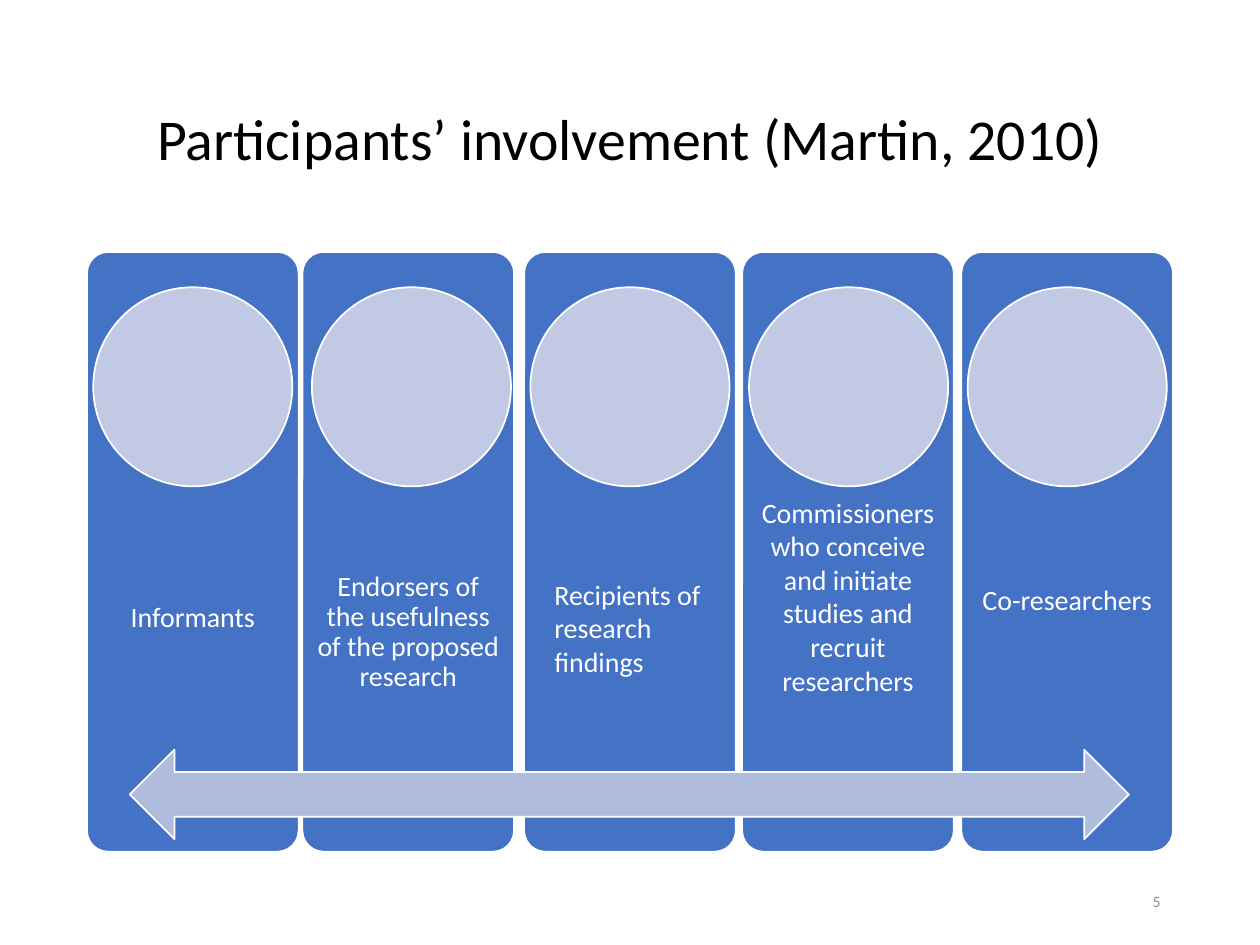
from pptx import Presentation
from pptx.dml.color import RGBColor
from pptx.enum.shapes import MSO_SHAPE as Shape
from pptx.enum.text import MSO_ANCHOR as Anchor, PP_ALIGN as Align
from pptx.util import Inches, Pt

COLUMN_WIDTH = 1.68
COLUMN_HEIGHT = 4.76
COLUMN_TOP = 2
CIRCLE_SIZE = 1.58

# left, label, alignment, line spacing, vertical shift of the label, left inset
COLUMNS = [
    (0.69, "Informants", Align.CENTER, 0.9, 0.06, 0.12),
    (2.4, "Endorsers of the usefulness of the proposed research",
     Align.CENTER, 0.9, 0.17, 0.12),
    (4.16, "Recipients of research findings", Align.LEFT, 1, 0.13, 0.24),
    (5.89, "Commissioners who conceive and initiate studies and recruit researchers",
     Align.CENTER, 1, -0.12, 0.12),
    (7.63, "Co-researchers", Align.CENTER, 1, -0.09, 0.12),
]


def color(hex_string):
    return RGBColor.from_string(hex_string)


def add_filled(page, kind, left, top, width, height, fill):
    """Add a preset shape with a thin white outline and no shadow."""
    shape = page.shapes.add_shape(
        kind, Inches(left), Inches(top), Inches(width), Inches(height))
    shape.shadow.inherit = False
    shape.fill.solid()
    shape.fill.fore_color.rgb = color(fill)
    shape.line.color.rgb = color("FFFFFF")
    shape.line.width = Pt(1)
    return shape


def add_text(page, left, top, width, height):
    box = page.shapes.add_textbox(
        Inches(left), Inches(top), Inches(width), Inches(height))
    box.text_frame.word_wrap = True
    box.text_frame.vertical_anchor = Anchor.MIDDLE
    return box.text_frame


def write(frame, text, size, hex_string, align, spacing=1):
    frame.text = text
    para = frame.paragraphs[0]
    para.alignment = align
    para.line_spacing = spacing
    para.font.name = "Calibri"
    para.font.size = Pt(size)
    para.font.color.rgb = color(hex_string)


def add_title(page, left, top, width, height):
    title = page.shapes.title
    title.left, title.top = Inches(left), Inches(top)
    title.width, title.height = Inches(width), Inches(height)
    title.text_frame.vertical_anchor = Anchor.MIDDLE
    write(title.text_frame, "Participants’ involvement (Martin, 2010)",
          33, "000000", Align.CENTER, 0.9)


def add_column(page, left, top, label, align, spacing, shift, inset):
    card = add_filled(page, Shape.ROUNDED_RECTANGLE, left, top,
                      COLUMN_WIDTH, COLUMN_HEIGHT, "4472C4")
    card.adjustments[0] = 0.1

    frame = add_text(page, left, top + 1.9, COLUMN_WIDTH, 1.9)
    frame.margin_left, frame.margin_right = Inches(inset), Inches(0.12)
    # In a centred frame, an inset on one side moves the text by half of it.
    frame.margin_top = Inches(max(0, 2 * shift))
    frame.margin_bottom = Inches(max(0, -2 * shift))
    write(frame, label, 16, "FFFFFF", align, spacing)


def add_circles(page, left, top, pitch):
    for index in range(len(COLUMNS)):
        add_filled(page, Shape.OVAL, left + index * pitch, top,
                   CIRCLE_SIZE, CIRCLE_SIZE, "C1C9E4")


def main():
    deck = Presentation()
    deck.slide_width, deck.slide_height = Inches(10), Inches(7.5)
    page = deck.slides.add_slide(deck.slide_layouts[5])

    add_title(page, 0.69, 0.4, 8.62, 1.45)
    for left, *label in COLUMNS:
        add_column(page, left, COLUMN_TOP, *label)
    add_circles(page, 0.74, COLUMN_TOP + 0.28, 1.735)
    add_filled(page, Shape.LEFT_RIGHT_ARROW, 1.03, 5.95, 7.93, 0.71, "B0BCDE")
    number = add_text(page, 7.06, 6.95, 2.25, 0.4)
    write(number, "5", 9, "8C8C8C", Align.RIGHT)

    deck.save("out.pptx")


if __name__ == "__main__":
    main()
